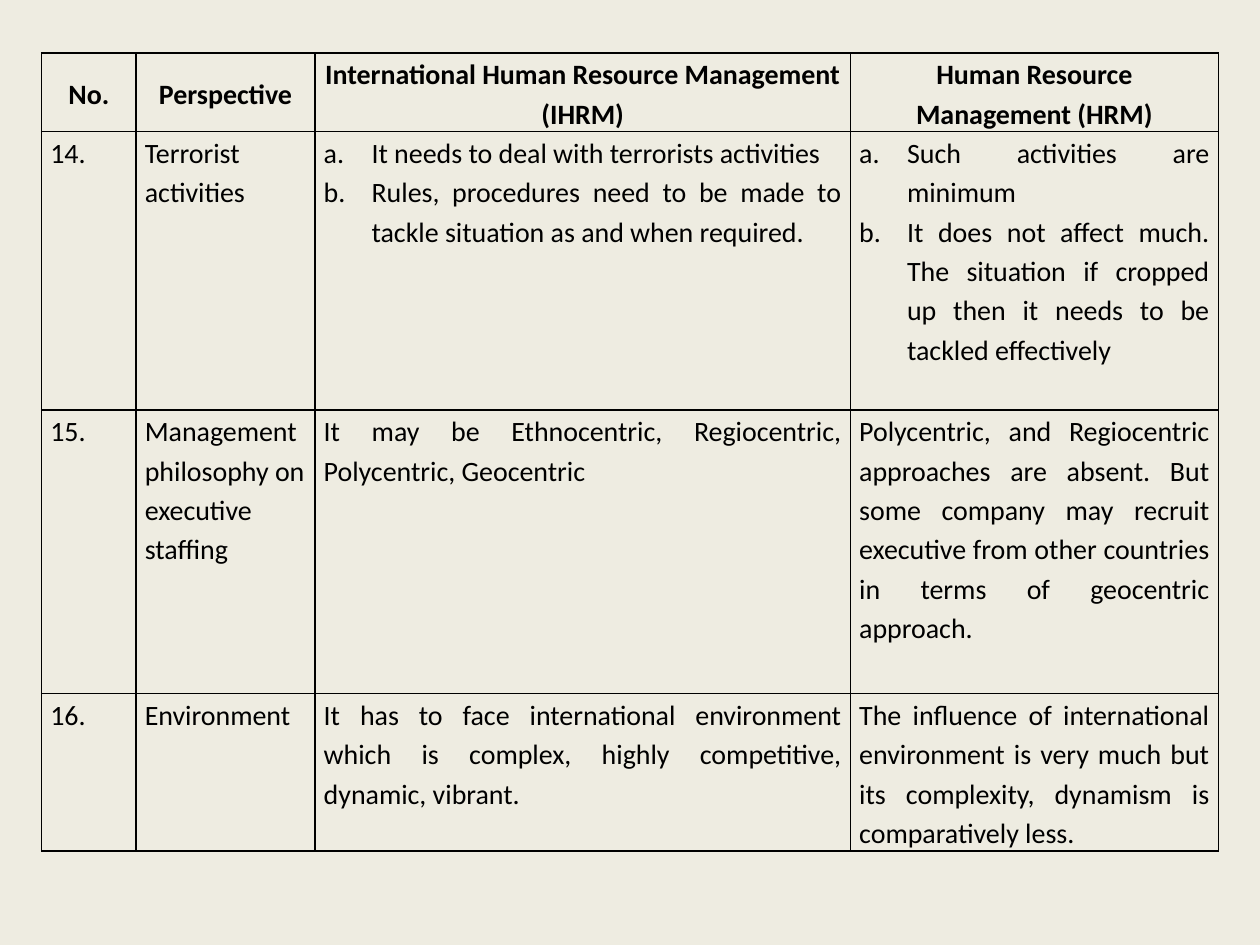
from lxml.etree import SubElement as Sub
from pptx import Presentation
from pptx.dml.color import RGBColor
from pptx.enum.text import MSO_ANCHOR as Anchor, PP_ALIGN as Align
from pptx.oxml import parse_xml
from pptx.oxml.ns import nsdecls, qn
from pptx.util import Inches, Pt

PAPER = RGBColor(0xEE, 0xEC, 0xE1)
INK = RGBColor(0, 0, 0)
FONT = "Calibri"
COLS = [0.75, 1.42, 4.25, 2.92]
ROWS = [0.62, 2.21, 2.25, 1.17]
HEAD = ["No.", "Perspective", "International Human Resource Management (IHRM)",
        "Human Resource Management (HRM)"]
BODY = [
    ["14.", "Terrorist activities",
     ["It needs to deal with terrorists activities",
      "Rules, procedures need to be made to tackle situation as and when required."],
     ["Such activities are minimum",
      "It does not affect much. The situation if cropped up then it needs to be "
      "tackled effectively"]],
    ["15.", "Management philosophy on executive staffing",
     "It may be Ethnocentric, Regiocentric, Polycentric, Geocentric",
     "Polycentric, and Regiocentric approaches are absent. But some company may "
     "recruit executive from other countries in terms of geocentric approach."],
    ["16.", "Environment",
     "It has to face international environment which is complex, highly "
     "competitive, dynamic, vibrant.",
     "The influence of international environment is very much but its complexity, "
     "dynamism is comparatively less."],
]


def write(frame, text, size=16, bold=False, align=Align.LEFT):
    listed = isinstance(text, list)
    for i, line in enumerate(text if listed else [text]):
        para = frame.add_paragraph() if i else frame.paragraphs[0]
        para.alignment = align
        para.line_spacing = 1.15
        run = para.add_run()
        run.text = line
        font = run.font
        font.name, font.size, font.bold = FONT, Pt(size), bold
        font.color.rgb = INK
        if listed:
            props = para._p.get_or_add_pPr()
            props.set("marL", str(Inches(0.38)))
            props.set("indent", str(Inches(-0.38)))
            Sub(props, qn("a:buFont"), typeface="+mj-lt")
            Sub(props, qn("a:buAutoNum"), type="alphaLcPeriod")


def border(cell, width=1):
    props = cell._tc.get_or_add_tcPr()
    for i, side in enumerate("LRTB"):
        props.insert(i, parse_xml(
            f'<a:ln{side} {nsdecls("a")} w="{Pt(width)}"><a:solidFill>'
            f'<a:srgbClr val="{INK}"/></a:solidFill></a:ln{side}>'))


def grid(slide, left, top, width, height):
    rows = [HEAD] + BODY
    table = slide.shapes.add_table(
        len(rows), len(COLS), left, top, width, height).table
    table.first_row = table.horz_banding = False
    for col, part in zip(table.columns, COLS):
        col.width = int(width * part / sum(COLS))
    for row, part in zip(table.rows, ROWS):
        row.height = int(height * part / sum(ROWS))
    for r, texts in enumerate(rows):
        for c, text in enumerate(texts):
            cell = table.cell(r, c)
            cell.margin_left = cell.margin_right = Inches(0.07)
            cell.margin_top = cell.margin_bottom = 0
            cell.vertical_anchor = Anchor.TOP if r else Anchor.MIDDLE
            cell.fill.background()
            border(cell)
            body = Align.JUSTIFY if c > 1 else Align.LEFT
            write(cell.text_frame, text, bold=r == 0,
                  align=body if r else Align.CENTER)


def main():
    deck = Presentation()
    deck.slide_width, deck.slide_height = Inches(10), Inches(7.5)
    slide = deck.slides.add_slide(deck.slide_layouts[6])
    back = slide.background.fill
    back.solid()
    back.fore_color.rgb = PAPER
    grid(slide, Inches(0.33), Inches(0.42), Inches(sum(COLS)), Inches(sum(ROWS)))
    deck.save("out.pptx")


if __name__ == "__main__":
    main()
